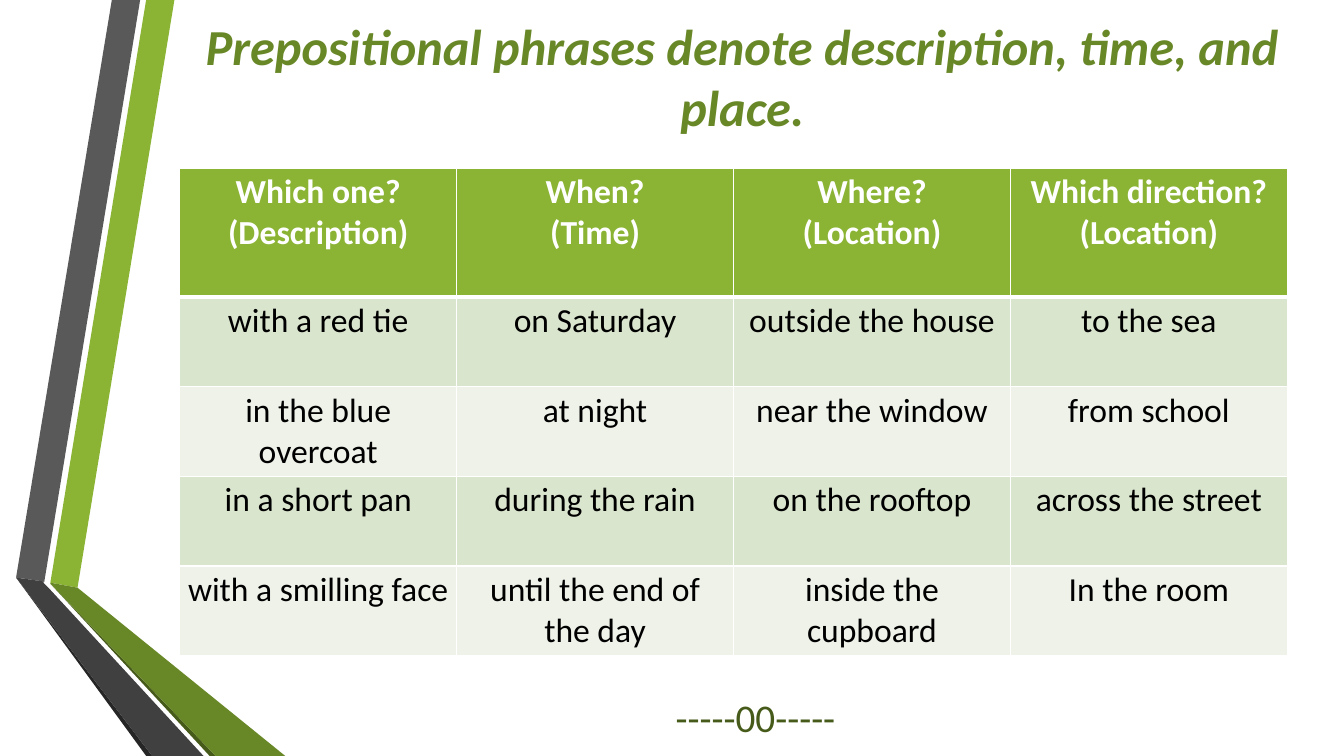
from dataclasses import dataclass

from lxml import etree
from pptx import Presentation
from pptx.dml.color import RGBColor
from pptx.enum.text import MSO_ANCHOR, MSO_AUTO_SIZE, PP_ALIGN
from pptx.oxml.ns import qn
from pptx.util import Pt

CENTER = PP_ALIGN.CENTER
TOP = MSO_ANCHOR.TOP
NO_AUTOFIT = MSO_AUTO_SIZE.NONE
FONT = "Calibri"
TITLE_ONLY = 5

COLORS = {
    "lime": "8BB434",
    "green": "688727",
    "moss": "465A1A",
    "gray": "595959",
    "charcoal": "404040",
    "soot": "262626",
    "band_dark": "DAE5CE",
    "band_light": "EEF2E8",
    "white": "FFFFFF",
    "black": "000000",
}


@dataclass(frozen=True)
class Ribbon:
    color: str
    points: tuple[tuple[float, float], ...]


@dataclass(frozen=True)
class TextStyle:
    size: float
    color: str
    bold: bool = False
    italic: bool = False


@dataclass(frozen=True)
class RowStyle:
    fill: str
    text: TextStyle
    bottom_border: float


TITLE_STYLE = TextStyle(36, "green", bold=True, italic=True)
FOOTER_STYLE = TextStyle(28, "moss")
BODY_STYLE = TextStyle(24, "black")
HEADER_ROW = RowStyle("lime", TextStyle(24, "white", bold=True), 3)
BANDS = (RowStyle("band_dark", BODY_STYLE, 1), RowStyle("band_light", BODY_STYLE, 1))

RIBBONS = (
    Ribbon("lime", ((36, 416.2), (55.4, 419.8), (124.6, 0), (104.4, 0))),
    Ribbon("gray", ((100.1, 0), (79.9, 0), (11.5, 412.6), (31.7, 415.4))),
    Ribbon("soot", ((11.5, 412.6), (104.4, 540), (108.7, 540))),
    Ribbon("moss", ((36, 416.9), (149.8, 540), (154.1, 540))),
    Ribbon("green", ((36, 416.9), (154.1, 540), (203.8, 540), (55.4, 419.8), (36, 416.2))),
    Ribbon("charcoal", ((145.4, 540), (34.6, 419.8), (31, 416.2), (31.7, 415.4),
                        (11.5, 412.6), (108.7, 540))),
)

PHRASES = (
    ("Which one?\n(Description)", "When?\n(Time)", "Where?\n(Location)",
     "Which direction?\n(Location)"),
    ("with a red tie", "on Saturday", "outside the house", "to the sea"),
    ("in the blue overcoat", "at night", "near the window", "from school"),
    ("in a short pan", "during the rain", "on the rooftop", "across the street"),
    ("with a smilling face", "until the end of the day", "inside the cupboard", "In the room"),
)
COLUMN_WIDTH = 197.8
HEADER_HEIGHT = 92.2
ROW_HEIGHT = 64


def rgb(name: str) -> RGBColor:
    return RGBColor.from_string(COLORS[name])


def write_text(tf, text: str, style: TextStyle) -> None:
    p = tf.paragraphs[0]
    p.alignment = CENTER
    for i, line in enumerate(text.split("\n")):
        if i:
            p.add_line_break()
        r = p.add_run()
        r.text = line
        r.font.name = FONT
        r.font.size = Pt(style.size)
        r.font.bold = style.bold
        r.font.italic = style.italic
        r.font.color.rgb = rgb(style.color)
    p.font.size = Pt(style.size)


def place_text(sp, box: tuple[float, ...], text: str, style: TextStyle) -> None:
    sp.left, sp.top, sp.width, sp.height = map(Pt, box)
    tf = sp.text_frame
    tf.word_wrap = True
    tf.auto_size = NO_AUTOFIT
    tf.vertical_anchor = TOP
    write_text(tf, text, style)


def draw_ribbon(s, ribbon: Ribbon) -> None:
    start, *rest = [(Pt(x), Pt(y)) for x, y in ribbon.points]
    builder = s.shapes.build_freeform(*start)
    builder.add_line_segments(rest, close=True)
    sp = builder.convert_to_shape()
    sp.shadow.inherit = False
    sp.fill.solid()
    sp.fill.fore_color.rgb = rgb(ribbon.color)
    sp.line.fill.background()


def add_border(cell, side: str, width: float) -> None:
    tc_pr = cell._tc.get_or_add_tcPr()
    ln = etree.SubElement(tc_pr, qn(f"a:{side}"), w=str(Pt(width)))
    fill = etree.SubElement(ln, qn("a:solidFill"))
    etree.SubElement(fill, qn("a:srgbClr"), val=COLORS["white"])


def format_cell(cell, text: str, style: RowStyle, top_border: float) -> None:
    cell.margin_left = cell.margin_right = Pt(5)
    cell.margin_top = cell.margin_bottom = Pt(2.5)
    cell.vertical_anchor = TOP
    widths = {"lnL": 1, "lnR": 1, "lnT": top_border, "lnB": style.bottom_border}
    for side, width in widths.items():
        add_border(cell, side, width)
    cell.fill.solid()
    cell.fill.fore_color.rgb = rgb(style.fill)
    write_text(cell.text_frame, text, style.text)


def draw_table(s) -> None:
    rows, cols = len(PHRASES), len(PHRASES[0])
    height = HEADER_HEIGHT + ROW_HEIGHT * (rows - 1)
    table = s.shapes.add_table(rows, cols, Pt(128.4), Pt(120.2),
                               Pt(COLUMN_WIDTH * cols), Pt(height)).table
    for column in table.columns:
        column.width = Pt(COLUMN_WIDTH)
    top_border = 1
    for i, phrases in enumerate(PHRASES):
        table.rows[i].height = Pt(ROW_HEIGHT if i else HEADER_HEIGHT)
        style = BANDS[(i - 1) % 2] if i else HEADER_ROW
        for j, phrase in enumerate(phrases):
            format_cell(table.cell(i, j), phrase, style, top_border)
        top_border = style.bottom_border


def main() -> None:
    prs = Presentation()
    prs.slide_width, prs.slide_height = Pt(960), Pt(540)
    s = prs.slides.add_slide(prs.slide_layouts[TITLE_ONLY])
    for ribbon in RIBBONS:
        draw_ribbon(s, ribbon)
    place_text(s.shapes.title, (128.2, 7.2, 804.2, 225.4),
               "Prepositional phrases denote description, time, and place.", TITLE_STYLE)
    draw_table(s)
    footer_box = (331.9, 491.8, 415.4, 41)
    footer = s.shapes.add_textbox(*map(Pt, footer_box))
    place_text(footer, footer_box, "-----00-----", FOOTER_STYLE)
    prs.save("out.pptx")


if __name__ == "__main__":
    main()
